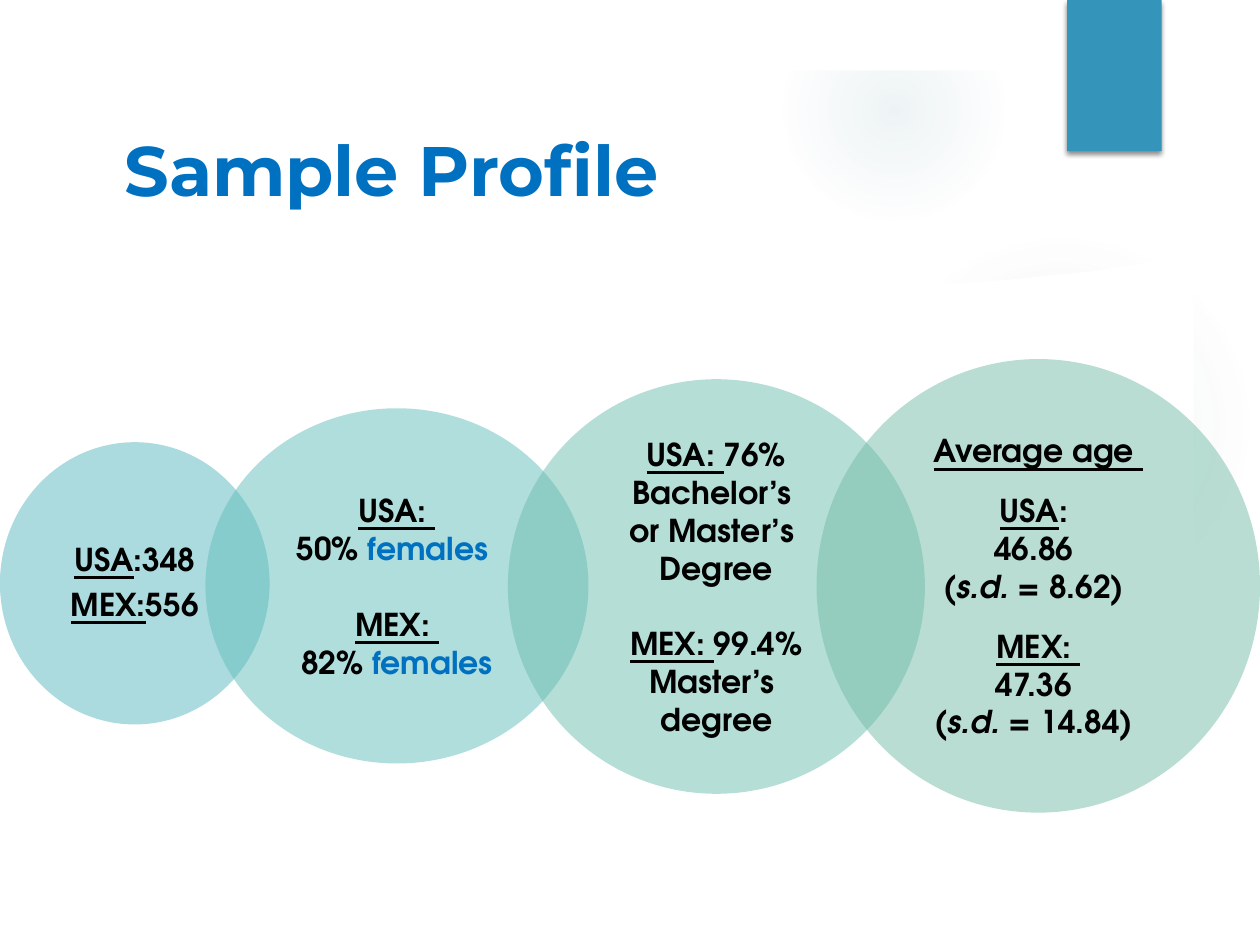
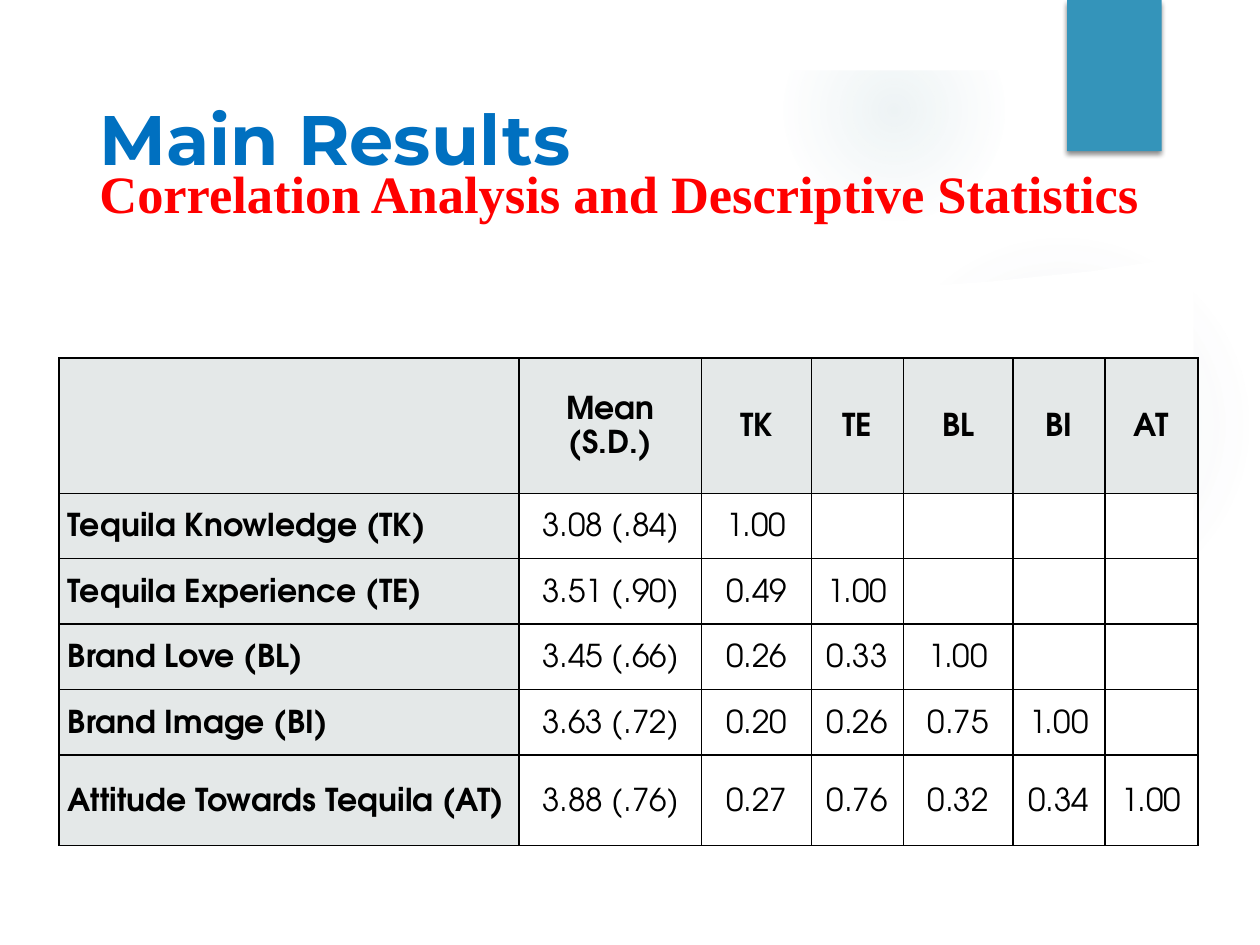
from pptx import Presentation
from pptx.dml.color import RGBColor
from pptx.enum.shapes import MSO_SHAPE
from pptx.enum.text import MSO_ANCHOR, PP_ALIGN
from pptx.oxml import parse_xml
from pptx.oxml.ns import nsdecls, qn
from pptx.util import Pt

OVAL, RECTANGLE = MSO_SHAPE.OVAL, MSO_SHAPE.RECTANGLE
TOP, MIDDLE = MSO_ANCHOR.TOP, MSO_ANCHOR.MIDDLE
LEFT, CENTER = PP_ALIGN.LEFT, PP_ALIGN.CENTER

COLORS = {
    "white": "FFFFFF",
    "black": "000000",
    "blue": "0070C0",
    "red": "FF0000",
    "ribbon": "3494BA",
    "glow": "84ACB6",
    "header": "E4E8E8",
    "sample": "58B6C0",
    "gender": "62BFBB",
    "education": "6CBEB0",
    "age": "75BDA7",
}
TITLE_FONT, BODY_FONT, SUBTITLE_FONT = "Montserrat", "TeX Gyre Adventor", "Times New Roman"
BODY_SIZE = 18
BLANK_LINE, SMALL_GAP = 21.6, 12.6

PANEL_OUTLINE = [
    (38, 146), (38, 503), (682, 503), (682, 146), (624, 155), (565, 161), (507, 165),
    (450, 168), (395, 168.5), (291, 168), (199, 163), (125, 156),
]

CIRCLES = [
    ("sample", (0, 252.7, 154.1, 161.3), 0.9, 6.3, [
        (0, [("USA", "u"), (":348", "")]),
        (0, [("MEX:", "u"), ("556", "")]),
    ]),
    ("gender", (117.4, 233.3, 218.9, 203), 1, 0, [
        (0, [("USA: ", "u")]),
        (0, [("50% ", ""), ("females ", "c")]),
        (BLANK_LINE, [("MEX: ", "u")]),
        (0, [("82% ", ""), ("females", "c")]),
    ]),
    ("education", (290.2, 216.7, 238.3, 236.9), 1, 0, [
        (0, [("USA: ", "u"), ("76% Bachelor’s ", "")]),
        (0, [("or Master’s ", "")]),
        (0, [("Degree", "")]),
        (BLANK_LINE, [("MEX: ", "u"), ("99.4% Master’s ", "")]),
        (0, [("degree", "")]),
    ]),
    ("age", (466.6, 205.2, 253.4, 259.2), 1, 0, [
        (0, [("Average age ", "u")]),
        (SMALL_GAP, [("USA", "u"), (": ", "")]),
        (0, [("46.86 ", "")]),
        (0, [("(", ""), ("s.d.", "i"), (" = 8.62) ", "")]),
        (SMALL_GAP, [("MEX: ", "u")]),
        (0, [("47.36 ", "")]),
        (0, [("(", ""), ("s.d.", "i"), (" = 14.84) ", "")]),
    ]),
]

COLUMN_WIDTHS = [262.8, 104.4, 62.7, 52.5, 62.7, 52.5, 53.3]
ROW_HEIGHTS = [77.4, 37.4, 37.4, 37.4, 37.4, 51.8]
CORRELATIONS = [
    ["", "Mean (S.D.)", "TK", "TE", "BL", "BI", "AT"],
    ["Tequila Knowledge (TK)", "3.08 (.84)", "1.00"],
    ["Tequila Experience (TE)", "3.51 (.90)", "0.49", "1.00"],
    ["Brand Love (BL)", "3.45 (.66)", "0.26", "0.33", "1.00"],
    ["Brand Image (BI)", "3.63 (.72)", "0.20", "0.26", "0.75", "1.00"],
    ["Attitude Towards Tequila (AT)", "3.88 (.76)", "0.27", "0.76", "0.32", "0.34", "1.00"],
]


def points(values):
    return [Pt(value) for value in values]


def rgb(name):
    return RGBColor.from_string(COLORS[name])


class Deck:
    def __init__(self):
        self.presentation = Presentation()
        self.presentation.slide_width, self.presentation.slide_height = Pt(720), Pt(540)
        self.slide = None

    def new_slide(self):
        self.slide = self.presentation.slides.add_slide(self.presentation.slide_layouts[6])
        self.glow((496.1, 131.8, 221.8, 221.8), [(0, 7), (36, 6), (69, 0)])
        self.glow((447.8, 0, 126, 126), [(0, 14), (36, 7), (73, 0)])
        self.panel()
        self.shape(RECTANGLE, (0, 0, 720, 40.3), "white")
        self.ribbon()

    def finish(self, shape, color):
        shape.shadow.inherit = False
        shape.line.fill.background()
        shape.fill.solid()
        shape.fill.fore_color.rgb = rgb(color)
        return shape

    def shape(self, kind, box, color, opacity=100):
        shape = self.finish(self.slide.shapes.add_shape(kind, *points(box)), color)
        if opacity < 100:
            solid = shape.fill._xPr.find(qn("a:solidFill"))
            solid[0].append(parse_xml(f'<a:alpha {nsdecls("a")} val="{opacity * 1000}"/>'))
        return shape

    def glow(self, box, stops):
        shape = self.shape(OVAL, box, "glow")
        stop_xml = "".join(
            f'<a:gs pos="{position * 1000}"><a:srgbClr val="{COLORS["glow"]}">'
            f'<a:alpha val="{opacity * 1000}"/></a:srgbClr></a:gs>'
            for position, opacity in stops + [(100, 0)]
        )
        gradient = parse_xml(
            f'<a:gradFill {nsdecls("a")}><a:gsLst>{stop_xml}</a:gsLst><a:path path="circle">'
            '<a:fillToRect l="50000" t="50000" r="50000" b="50000"/></a:path></a:gradFill>'
        )
        properties = shape._element.spPr
        properties.replace(properties.find(qn("a:solidFill")), gradient)

    def panel(self):
        start, *others = [points(point) for point in PANEL_OUTLINE]
        builder = self.slide.shapes.build_freeform(*start)
        builder.add_line_segments(others, close=True)
        self.finish(builder.convert_to_shape(), "white")

    def ribbon(self):
        ribbon = self.shape(RECTANGLE, (609.8, 0, 54, 86.4), "ribbon")
        effects = ribbon._element.spPr.find(qn("a:effectLst"))
        effects.append(parse_xml(
            f'<a:outerShdw {nsdecls("a")} blurRad="{Pt(3)}" dist="{Pt(2)}" dir="5400000" '
            f'rotWithShape="0"><a:srgbClr val="{COLORS["black"]}"><a:alpha val="45000"/>'
            '</a:srgbClr></a:outerShdw>'
        ))

    def run(self, paragraph, text, font, size, color, bold=True):
        run = paragraph.add_run()
        run.text = text
        run.font.name, run.font.size, run.font.bold = font, Pt(size), bold
        run.font.color.rgb = rgb(color)
        return run

    def heading(self, text, box, font=TITLE_FONT, size=40, color="blue", anchor=MIDDLE):
        frame = self.slide.shapes.add_textbox(*points(box)).text_frame
        frame.word_wrap, frame.vertical_anchor = True, anchor
        self.run(frame.paragraphs[0], text, font, size, color)

    def circle(self, color, box, line_spacing, space_after, lines):
        frame = self.shape(OVAL, box, color, 50).text_frame
        frame.word_wrap, frame.vertical_anchor = True, MIDDLE
        frame.margin_left = frame.margin_right = Pt(13)
        frame.margin_top = frame.margin_bottom = Pt(2.2)
        for index, (space_before, runs) in enumerate(lines):
            paragraph = frame.add_paragraph() if index else frame.paragraphs[0]
            paragraph.alignment = CENTER
            paragraph.line_spacing = line_spacing
            paragraph.space_before, paragraph.space_after = Pt(space_before), Pt(space_after)
            for text, style in runs:
                run = self.run(paragraph, text, BODY_FONT, BODY_SIZE,
                               "blue" if style == "c" else "black")
                run.font.underline = style == "u"
                run.font.italic = style == "i"

    def cell(self, cell, text, is_header, alignment):
        properties = cell._tc.get_or_add_tcPr()
        for side in "LRTB":
            properties.append(parse_xml(
                f'<a:ln{side} {nsdecls("a")} w="{Pt(1)}"><a:solidFill>'
                f'<a:srgbClr val="{COLORS["black"]}"/></a:solidFill></a:ln{side}>'
            ))
        if is_header:
            cell.fill.solid()
            cell.fill.fore_color.rgb = rgb("header")
        else:
            cell.fill.background()
        cell.vertical_anchor = MIDDLE
        cell.margin_left = cell.margin_right = Pt(5)
        cell.margin_top = cell.margin_bottom = 0
        if text:
            paragraph = cell.text_frame.paragraphs[0]
            paragraph.alignment, paragraph.line_spacing = alignment, 1.15
            self.run(paragraph, text, BODY_FONT, BODY_SIZE, "black", is_header)

    def table(self, left, top, widths, heights, rows):
        table = self.slide.shapes.add_table(
            len(heights), len(widths), *points((left, top, sum(widths), sum(heights)))
        ).table
        table.first_row = table.horz_banding = False
        for column, width in zip(table.columns, widths):
            column.width = Pt(width)
        for row_index, (height, texts) in enumerate(zip(heights, rows)):
            table.rows[row_index].height = Pt(height)
            for column_index in range(len(widths)):
                text = texts[column_index] if column_index < len(texts) else ""
                is_header = row_index == 0 or column_index == 0
                self.cell(table.cell(row_index, column_index), text, is_header,
                          CENTER if column_index else LEFT)


def main():
    deck = Deck()

    deck.new_slide()
    deck.heading("Sample Profile", (64.1, 68.4, 499.7, 56.2))
    for circle in CIRCLES:
        deck.circle(*circle)

    deck.new_slide()
    deck.table(33.8, 204.5, COLUMN_WIDTHS, ROW_HEIGHTS, CORRELATIONS)
    deck.heading("Correlation Analysis and Descriptive Statistics", (49.7, 88.6, 663.8, 43.9),
                 SUBTITLE_FONT, 30, "red", TOP)
    deck.heading("Main Results", (49.7, 50.4, 499.7, 56.2))

    deck.presentation.save("out.pptx")


if __name__ == "__main__":
    main()
